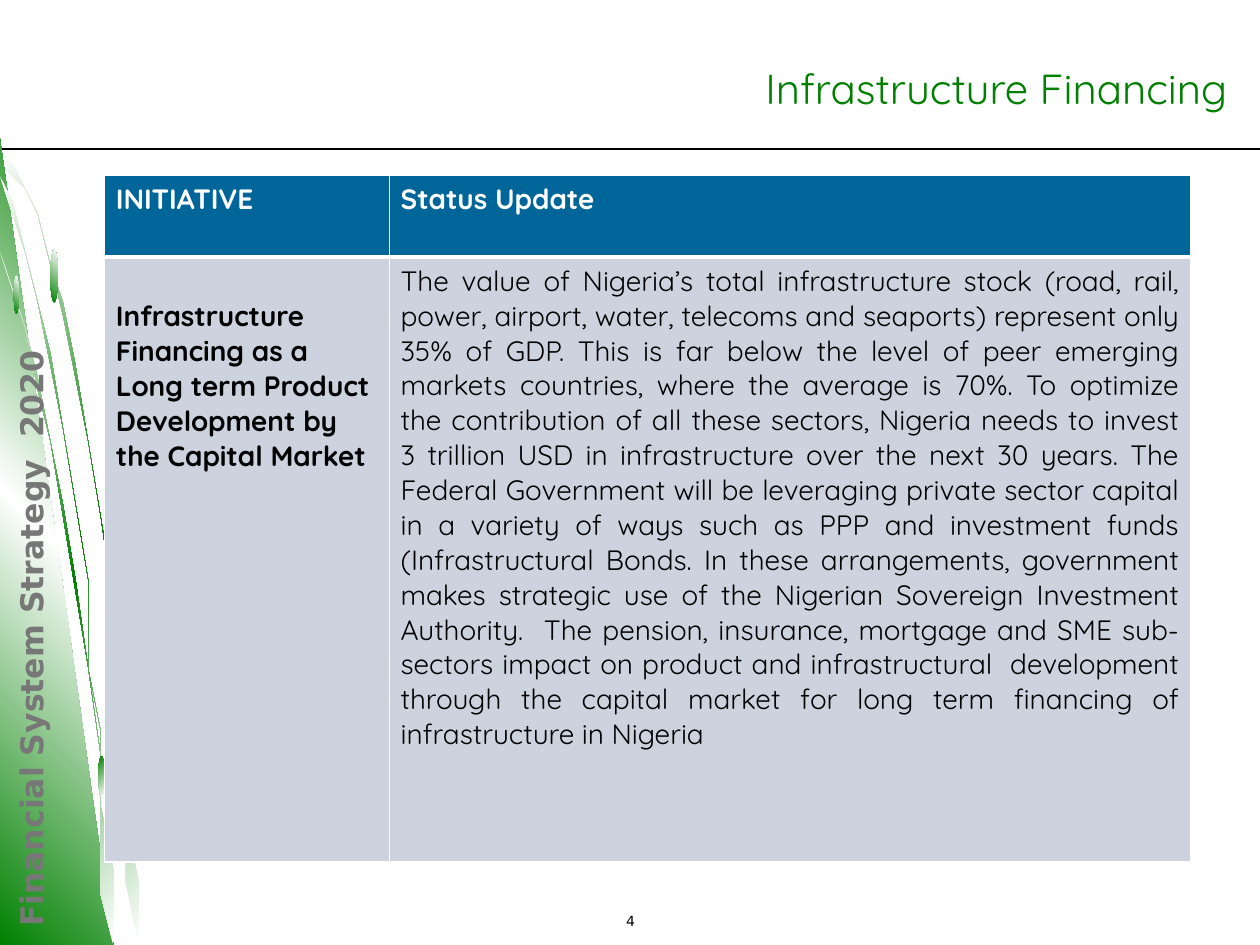
from lxml.etree import SubElement
from pptx import Presentation
from pptx.dml.color import RGBColor
from pptx.enum.shapes import MSO_CONNECTOR, MSO_SHAPE
from pptx.enum.text import MSO_ANCHOR, PP_ALIGN
from pptx.oxml.ns import qn
from pptx.util import Inches, Pt

GREEN = RGBColor(0x00, 0x80, 0x00)
WHITE = RGBColor(0xFF, 0xFF, 0xFF)
BLACK = RGBColor(0x00, 0x00, 0x00)
GRAY = RGBColor(0x77, 0x77, 0x77)
BLUE = RGBColor(0x00, 0x66, 0x99)
PALE = RGBColor(0xCC, 0xD3, 0xDE)

SANS = "DejaVu Sans"
QUICK = "Quicksand"

COLS, ROWS = 100, 75
UNIT = Inches(10) // COLS

OUTER_BLADE = [(0, 12.3), (0.8, 13.4), (1.7, 14.6), (2.9, 17.1), (4, 20.6),
               (5.1, 24.5), (6.1, 29.3), (7, 34.7), (7.9, 40.8), (8.7, 47.4),
               (9.5, 54.7), (9.9, 59.6), (10.3, 64.6), (10.6, 69.6), (10.8, 74.8)]
LOWER_BLADE = [(0, 20.2), (1.2, 22.9), (2.3, 26.2), (3.4, 30.4), (4.4, 34.9),
               (5.4, 40.3), (6.3, 46.4), (7.1, 53.1), (7.8, 60.2), (8.3, 67.5),
               (8.6, 71.1), (8.8, 74.8)]
MIDDLE_BLADE = [(0, 13.6), (1.1, 16.3), (2.2, 19.8), (3.3, 23.7), (4.2, 28.5),
                (5.1, 33.7), (5.9, 39.7), (6.7, 45.8), (7.4, 52.9), (7.8, 58.2),
                (8.2, 63.6), (8.6, 69.2), (8.8, 74.8)]
DEWDROPS = [((1.1, 21.9, 0.4, 3), 315), ((7.8, 60, 0.5, 3.2), 45),
            ((4, 19.8, 0.6, 4.2), 315)]

HEADERS = ["INITIATIVE", "Status Update"]
INITIATIVE = ("Infrastructure Financing as a Long term Product Development "
              "by the Capital Market")
STATUS = (
    "The value of Nigeria’s total infrastructure stock (road, rail, power, "
    "airport, water, telecoms and seaports) represent only 35% of GDP. This is "
    "far below the level of peer emerging markets countries, where the average "
    "is 70%. To optimize the contribution of all these sectors, Nigeria needs "
    "to invest 3 trillion USD in infrastructure over the next 30 years. The "
    "Federal Government will be leveraging private sector capital in a variety "
    "of ways such as PPP and investment funds (Infrastructural Bonds. In these "
    "arrangements, government makes strategic use of the Nigerian Sovereign "
    "Investment Authority.  The pension, insurance, mortgage and SME "
    "sub-sectors impact on product and infrastructural  development through "
    "the capital market for long term financing of infrastructure in Nigeria"
)


def grid(*cells):
    return [round(c * UNIT) for c in cells]


def style_text(tf, text, font, size, color, bold=False, align=PP_ALIGN.LEFT):
    tf.text = text
    tf.word_wrap = True
    p = tf.paragraphs[0]
    p.alignment = align
    f = p.runs[0].font
    f.name, f.size, f.bold = font, Pt(size), bold
    f.color.rgb = color
    return p


def add_label(s, box, text, font, size, color, **style):
    sp = s.shapes.add_textbox(*grid(*box))
    p = style_text(sp.text_frame, text, font, size, color, **style)
    return sp, p


def paint_gradient(sp, colors, angle):
    sp.shadow.inherit = False
    sp.line.fill.background()
    sp.fill.gradient()
    sp.fill.gradient_angle = 360 - angle
    stops = sp.fill._fill._gradFill.find(qn("a:gsLst"))
    for gs in list(stops):
        stops.remove(gs)
    for i, color in enumerate(colors):
        pos = 100000 * i // (len(colors) - 1)
        gs = SubElement(stops, qn("a:gs"), pos=str(pos))
        SubElement(gs, qn("a:srgbClr"), val=str(color))


def add_outline(s, points, colors, angle):
    builder = s.shapes.build_freeform(*points[0], scale=float(UNIT))
    builder.add_line_segments(points[1:], close=True)
    paint_gradient(builder.convert_to_shape(), colors, angle)


def add_blade(s, edge):
    inner = [(max(x - 0.1, 0), min(y + 0.3, 74.8)) for x, y in edge]
    add_outline(s, edge + inner[::-1], [WHITE, GREEN, WHITE], 45)


def add_side_art(s, box):
    x, y, w, h = box
    add_blade(s, OUTER_BLADE)
    add_outline(s, [(x, y), (x + w, y + h), (x, y + h)], [GREEN, WHITE, GREEN], 315)
    add_blade(s, LOWER_BLADE)
    add_blade(s, MIDDLE_BLADE)
    for drop, angle in DEWDROPS:
        sp = s.shapes.add_shape(MSO_SHAPE.OVAL, *grid(*drop))
        paint_gradient(sp, [GREEN, WHITE], angle)


def add_side_label(s, box):
    sp, p = add_label(s, box, "Financial System Strategy  2020", SANS, 18, GRAY, bold=True)
    sp.rotation = 270


def add_rule(s, y):
    line = s.shapes.add_connector(MSO_CONNECTOR.STRAIGHT, *grid(0, y, COLS, y))
    line.line.color.rgb = BLACK
    line.line.width = Pt(1)
    SubElement(line._element.spPr, qn("a:effectLst"))


def add_title(s, box):
    sp, p = add_label(s, box, "Infrastructure Financing", QUICK, 24, GREEN,
                      align=PP_ALIGN.RIGHT)
    tf = sp.text_frame
    tf.vertical_anchor = MSO_ANCHOR.BOTTOM
    tf.margin_left = tf.margin_right = tf.margin_top = tf.margin_bottom = 0


def set_borders(cell, widths):
    tcPr = cell._tc.get_or_add_tcPr()
    for i, (side, width) in enumerate(zip("LRTB", widths)):
        ln = SubElement(tcPr, qn(f"a:ln{side}"), w=str(Pt(width)))
        fill = SubElement(ln, qn("a:solidFill"))
        SubElement(fill, qn("a:srgbClr"), val=str(WHITE))
        tcPr.remove(ln)
        tcPr.insert(i, ln)


def add_status_table(s, box, widths, heights):
    table = s.shapes.add_table(2, 2, *grid(*box)).table
    for column, width in zip(table.columns, grid(*widths)):
        column.width = width
    for row, height in zip(table.rows, grid(*heights)):
        row.height = height
    rows = [(HEADERS, BLUE, WHITE, (1, 1, 1, 3)),
            ([INITIATIVE, STATUS], PALE, BLACK, (1, 1, 3, 1))]
    for r, (texts, fill, color, borders) in enumerate(rows):
        for c, text in enumerate(texts):
            cell = table.cell(r, c)
            is_status = text == STATUS
            align = PP_ALIGN.JUSTIFY if is_status else PP_ALIGN.LEFT
            style_text(cell.text_frame, text, QUICK, 16, color, not is_status, align)
            cell.margin_left = cell.margin_right = Inches(0.09)
            cell.margin_top = Inches(0.33 if text == INITIATIVE else 0.05)
            cell.margin_bottom = Inches(0.05)
            cell.fill.solid()
            cell.fill.fore_color.rgb = fill
            set_borders(cell, borders)


def add_page_number(s, box):
    sp, p = add_label(s, box, "4", SANS, 8, BLACK, align=PP_ALIGN.CENTER)
    p.line_spacing = 0.7
    sp.text_frame.vertical_anchor = MSO_ANCHOR.BOTTOM
    sp.text_frame.margin_bottom = Inches(0.13)


def main():
    prs = Presentation()
    prs.slide_width, prs.slide_height = grid(COLS, ROWS)
    s = prs.slides.add_slide(prs.slide_layouts[6])
    s.background.fill.solid()
    s.background.fill.fore_color.rgb = WHITE
    add_rule(s, 11.8)
    add_side_art(s, (0, 10.6, 9.4, 64.3))
    add_side_label(s, (-25.1, 45, 55.1, 4))
    add_title(s, (18.1, 2.7, 79.3, 6.3))
    add_status_table(s, (8.3, 13.9, 86.2, 54.5), (22.6, 63.6), (6.5, 48))
    add_page_number(s, (38.5, 69.8, 23.1, 5.2))
    prs.save("out.pptx")


if __name__ == "__main__":
    main()
